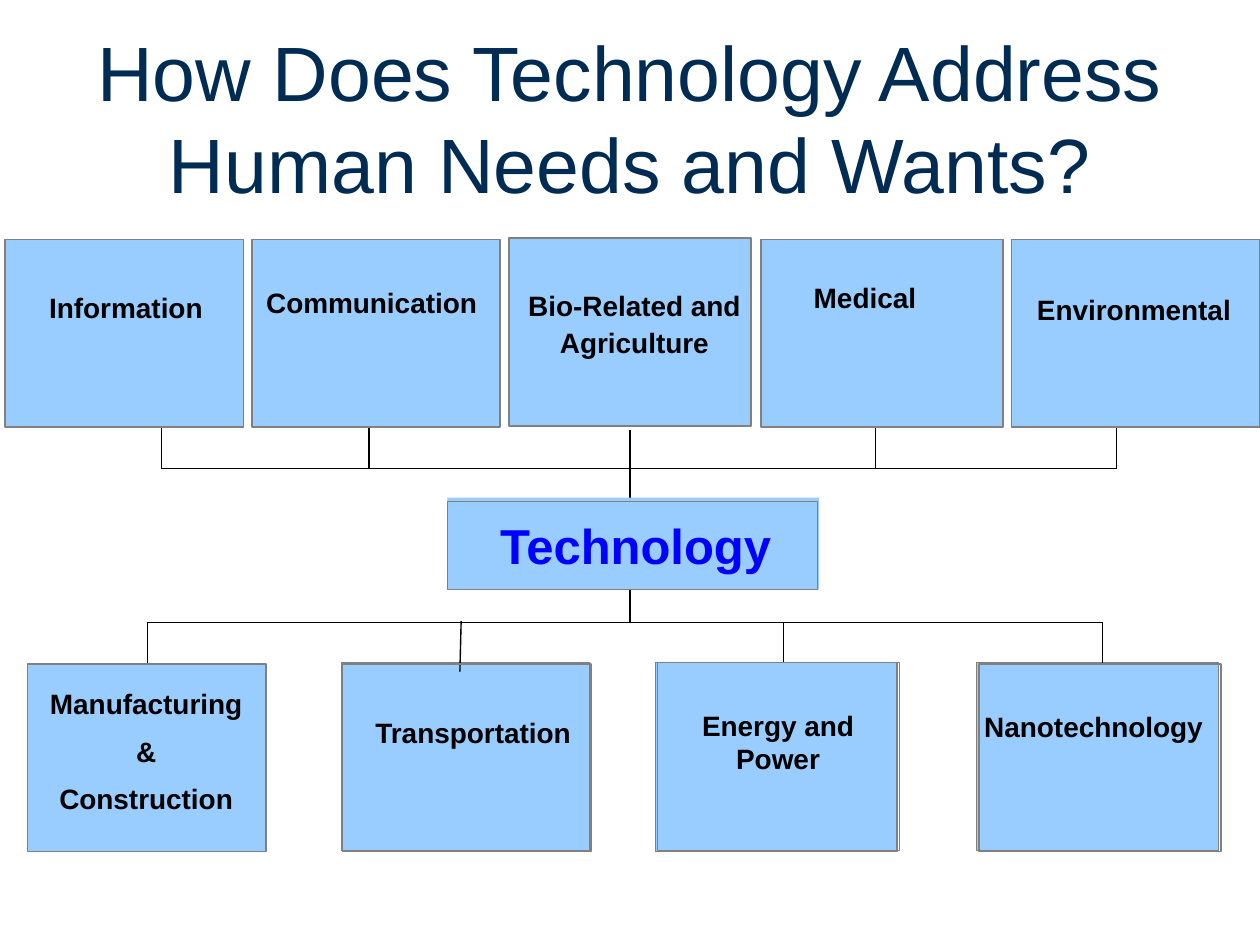
import itertools
from typing import NamedTuple, Optional

import pptx
import pptx.dml.color
import pptx.enum.shapes
import pptx.enum.text
import pptx.oxml.xmlchemy
import pptx.util

Inches = pptx.util.Inches
Pt = pptx.util.Pt
Align = pptx.enum.text.PP_ALIGN

SKY, GREY, BLACK = "99CCFF", "808080", "000000"
NAVY, BLUE = "002B52", "0000FF"


class Box(NamedTuple):
    left: float
    top: float
    width: float
    height: float = 1.49
    fill: Optional[str] = SKY
    line: Optional[str] = GREY
    weight: float = 0.8


class Label(NamedTuple):
    lines: tuple[str, ...]
    left: float
    top: float
    width: float
    height: float = 0.27
    size: float = 16
    color: str = BLACK
    bold: bool = True
    before: float = 0
    wrap: bool = True
    inset: float = 0
    align: Align = Align.CENTER


class Line(NamedTuple):
    x1: float
    y1: float
    x2: float
    y2: float


def rgb(code: str) -> pptx.dml.color.RGBColor:
    return pptx.dml.color.RGBColor.from_string(code)


def draw_box(slide, box: Box) -> None:
    shape = slide.shapes.add_shape(
        pptx.enum.shapes.MSO_SHAPE.RECTANGLE,
        Inches(box.left), Inches(box.top), Inches(box.width), Inches(box.height))
    shape.shadow.inherit = False
    if box.fill:
        shape.fill.solid()
        shape.fill.fore_color.rgb = rgb(box.fill)
    else:
        shape.fill.background()
    if box.line:
        shape.line.color.rgb = rgb(box.line)
        shape.line.width = Pt(box.weight)
    else:
        shape.line.fill.background()


def draw_line(slide, line: Line) -> None:
    link = slide.shapes.add_connector(
        pptx.enum.shapes.MSO_CONNECTOR.STRAIGHT,
        Inches(line.x1), Inches(line.y1), Inches(line.x2), Inches(line.y2))
    link.line.color.rgb = rgb(BLACK)
    link.line.width = Pt(0.8)
    props = link._element.spPr
    props.append(pptx.oxml.xmlchemy.OxmlElement("a:effectLst"))


def draw_bar(slide, stops: tuple[float, ...], y: float) -> None:
    for start, end in itertools.pairwise(stops):
        draw_line(slide, Line(start, y, end, y))


def draw_label(slide, label: Label) -> None:
    shape = slide.shapes.add_textbox(
        Inches(label.left), Inches(label.top), Inches(label.width), Inches(label.height))
    frame = shape.text_frame
    frame.word_wrap = label.wrap
    frame.vertical_anchor = pptx.enum.text.MSO_ANCHOR.TOP
    if label.inset:
        frame.vertical_anchor = pptx.enum.text.MSO_ANCHOR.MIDDLE
    frame.margin_left = frame.margin_right = Inches(label.inset)
    frame.margin_top = frame.margin_bottom = Inches(label.inset / 2)
    for index, text in enumerate(label.lines):
        para = frame.add_paragraph() if index else frame.paragraphs[0]
        para.alignment = label.align
        if index and label.before:
            para.space_before = Pt(label.before)
        run = para.add_run()
        run.text = text
        run.font.name = "Arial"
        run.font.size = Pt(label.size)
        run.font.bold = label.bold
        run.font.color.rgb = rgb(label.color)


TITLE = Label(("How Does Technology Address Human Needs and Wants?",),
              0.5, 0.3, 9, 1.25, size=44, color=NAVY, bold=False, inset=0.1)

TOP = (
    Box(0.04, 1.9, 1.89, weight=0.75),
    Box(2, 1.9, 1.97),
    Box(4.04, 1.89, 1.92),
    Box(6.04, 1.9, 1.92),
    Box(8.03, 1.9, 1.97),
)
LOW = (
    Box(0.22, 5.27, 1.89, line=None),
    Box(2.71, 5.26, 1.97, weight=0.75),
    Box(5.2, 5.26, 1.92, 1.5, weight=0.75),
    Box(7.75, 5.26, 1.92, weight=0.75),
)
FRAMES = (
    Box(0.22, 5.27, 1.89, fill=None),
    Box(2.72, 5.27, 1.97, fill=None),
    Box(5.22, 5.26, 1.92, fill=None),
    Box(7.77, 5.27, 1.92, fill=None),
)
HUB = (
    Box(3.55, 3.95, 2.95, 0.73, line=None),
    Box(3.55, 3.98, 2.94, 0.7, fill=None),
)
LABELS = (
    Label(("Information",), 0, 2.31, 2),
    Label(("Communication",), 1.95, 2.27, 2),
    Label(("Bio-Related and", "Agriculture"), 4.19, 2.29, 1.69, 0.57,
          before=2, wrap=False),
    Label(("Medical",), 5.7, 2.23, 2.33),
    Label(("Environmental",), 8, 2.32, 2),
    Label(("Technology",), 3.63, 4.09, 2.83, 0.47, size=28, color=BLUE),
    Label(("Manufacturing", "&", "Construction"), 0.2, 5.45, 1.92, 1.08, before=8),
    Label(("Transportation",), 2.98, 5.68, 1.57, wrap=False, align=Align.LEFT),
    Label(("Energy and Power",), 5.3, 5.62, 1.75, 0.53),
    Label(("Nanotechnology",), 7.68, 5.63, 2),
)
RAIL, BASE = 3.72, 4.94
TRUNK = Line(5, 3.41, 5, BASE)
DROPS = tuple(Line(x, RAIL, x, 3.4) for x in (1.28, 2.93, 6.95, 8.86))
LEGS = tuple(Line(x, BASE, x, 5.26) for x in (1.17, 6.22, 8.75))
SLANT = Line(3.66, 4.93, 3.65, 5.33)


def main() -> None:
    deck = pptx.Presentation()
    deck.slide_width, deck.slide_height = Inches(10), Inches(7.5)
    slide = deck.slides.add_slide(deck.slide_layouts[6])
    draw_label(slide, TITLE)
    for box in TOP + LOW:
        draw_box(slide, box)
    for line in (TRUNK, SLANT) + LEGS + DROPS:
        draw_line(slide, line)
    draw_bar(slide, (1.17, 3.69, 4.96, 6.22, 8.75), BASE)
    draw_bar(slide, (1.28, 3.81, 5.07, 6.34, 8.86), RAIL)
    for box in FRAMES + HUB:
        draw_box(slide, box)
    for label in LABELS:
        draw_label(slide, label)
    deck.save("out.pptx")


if __name__ == "__main__":
    main()
